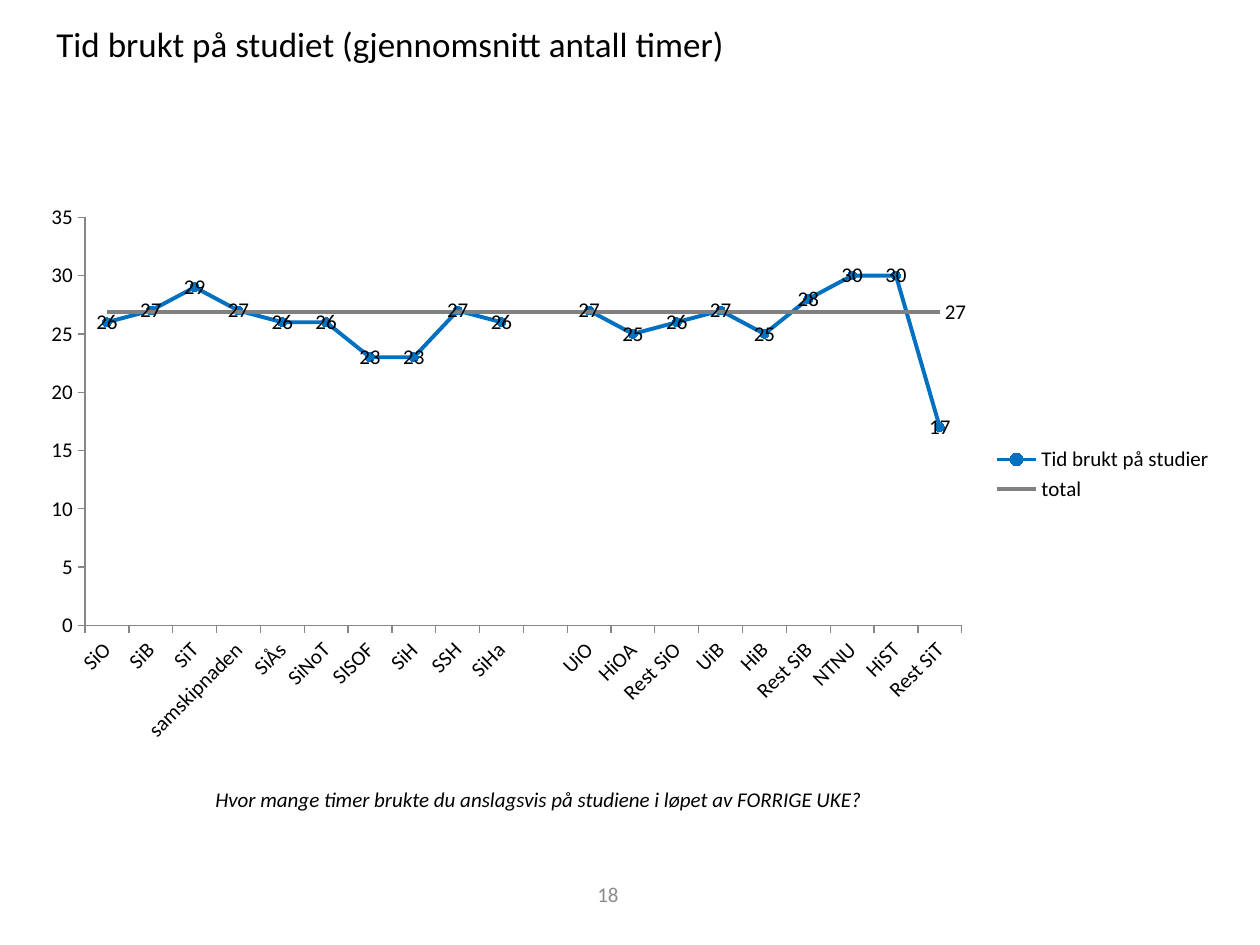
from lxml.etree import SubElement
from pptx import Presentation
from pptx.chart.data import CategoryChartData
from pptx.dml.color import RGBColor
from pptx.enum.chart import (XL_CHART_TYPE, XL_LABEL_POSITION, XL_LEGEND_POSITION,
                             XL_MARKER_STYLE, XL_TICK_MARK)
from pptx.enum.text import MSO_ANCHOR, PP_ALIGN
from pptx.oxml.ns import qn
from pptx.util import Emu, Pt

PX = 914400 / 126
FONT = "Calibri"
COLORS = {"text": "000000", "page": "8C8C8C", "hours": "0070C0",
          "total": "808080", "axis": "868686"}
HOURS = {"SiO": 26, "SiB": 27, "SiT": 29, "samskipnaden": 27, "SiÅs": 26,
         "SiNoT": 26, "SISOF": 23, "SiH": 23, "SSH": 27, "SiHa": 26, "": None,
         "UiO": 27, "HiOA": 25, "Rest SiO": 26, "UiB": 27, "HiB": 25,
         "Rest SiB": 28, "NTNU": 30, "HiST": 30, "Rest SiT": 17}
TOTAL = 26.85  # keeps the average line just below its rounded label, 27


def px(*lengths):
    return [Emu(round(length * PX)) for length in lengths]


def color(name):
    return RGBColor.from_string(COLORS[name])


def format_font(font, color_name="text", **values):
    for name, value in {"name": FONT, "size": Pt(12), **values}.items():
        setattr(font, name, value)
    font.color.rgb = color(color_name)


def add_text(slide, box, text, wrap=True, anchor=MSO_ANCHOR.TOP,
             align=PP_ALIGN.LEFT, **font_values):
    frame = slide.shapes.add_textbox(*px(*box)).text_frame
    frame.word_wrap = wrap
    frame.vertical_anchor = anchor
    paragraph = frame.paragraphs[0]
    paragraph.text = text
    paragraph.alignment = align
    format_font(paragraph.runs[0].font, **font_values)


def set_plot_layout(chart, **fractions):
    """Fix the inner plot area, in fractions of the chart frame."""
    plot_area = chart._chartSpace.chart.plotArea
    for old in plot_area.findall(qn("c:layout")):
        plot_area.remove(old)
    layout = SubElement(plot_area, qn("c:layout"))
    plot_area.insert(0, layout)
    manual = SubElement(layout, qn("c:manualLayout"))
    values = {"layoutTarget": "inner", "xMode": "edge", "yMode": "edge", **fractions}
    for name, value in values.items():
        SubElement(manual, qn(f"c:{name}")).set("val", str(value))


def format_axis(axis):
    axis.has_major_gridlines = False
    axis.major_tick_mark = XL_TICK_MARK.OUTSIDE
    axis.minor_tick_mark = XL_TICK_MARK.NONE
    axis.format.line.color.rgb = color("axis")
    axis.format.line.width = Pt(0.75)
    format_font(axis.tick_labels.font)


def format_series(series, color_name):
    series.smooth = False
    series.format.line.color.rgb = color(color_name)
    series.format.line.width = Pt(2.25)


def add_hours_chart(slide, box):
    data = CategoryChartData(number_format="###0")
    data.categories = list(HOURS)
    data.add_series("Tid brukt på studier", list(HOURS.values()))
    data.add_series("total", [TOTAL] * len(HOURS))
    chart = slide.shapes.add_chart(XL_CHART_TYPE.LINE_MARKERS, *px(*box), data).chart
    format_font(chart.font)
    chart.has_title = False
    chart.has_legend = True
    chart.legend.position = XL_LEGEND_POSITION.RIGHT
    chart.legend.include_in_layout = False
    format_font(chart.legend.font)
    set_plot_layout(chart, x=0.05, y=0.04, w=0.73, h=0.73)

    for axis in (chart.category_axis, chart.value_axis):
        format_axis(axis)
    chart.category_axis._element.txPr.bodyPr.set("rot", "-2700000")
    scale = {"minimum_scale": 0, "maximum_scale": 35, "major_unit": 5}
    for name, value in scale.items():
        setattr(chart.value_axis, name, value)

    plot = chart.plots[0]
    plot.vary_by_categories = False
    hours, total = plot.series
    format_series(hours, "hours")
    format_series(total, "total")

    hours.marker.style = XL_MARKER_STYLE.CIRCLE
    hours.marker.size = 5
    hours.marker.format.fill.solid()
    hours.marker.format.fill.fore_color.rgb = color("hours")
    hours.marker.format.line.color.rgb = color("hours")
    labels = hours.data_labels
    labels.show_value = True
    labels.position = XL_LABEL_POSITION.CENTER
    labels.number_format = "###0"
    labels.number_format_is_linked = False
    format_font(labels.font)

    total.marker.style = XL_MARKER_STYLE.NONE
    total.data_labels.show_value = False
    last_label = total.points[len(HOURS) - 1].data_label
    last_label.position = XL_LABEL_POSITION.RIGHT
    format_font(last_label.font)


def main():
    presentation = Presentation()
    presentation.slide_width, presentation.slide_height = px(1260, 945)
    slide = presentation.slides.add_slide(presentation.slide_layouts[6])
    add_text(slide, (461, 869, 294, 50), "18", anchor=MSO_ANCHOR.MIDDLE,
             align=PP_ALIGN.CENTER, color_name="page")
    add_hours_chart(slide, (25, 195, 1201, 559))
    add_text(slide, (44, 16, 701, 55),
             "Tid brukt på studiet (gjennomsnitt antall timer)", wrap=False, size=Pt(20))
    add_text(slide, (203, 780, 753, 38),
             "Hvor mange timer brukte du anslagsvis på studiene i løpet av FORRIGE UKE?",
             italic=True)
    presentation.save("out.pptx")


if __name__ == "__main__":
    main()
